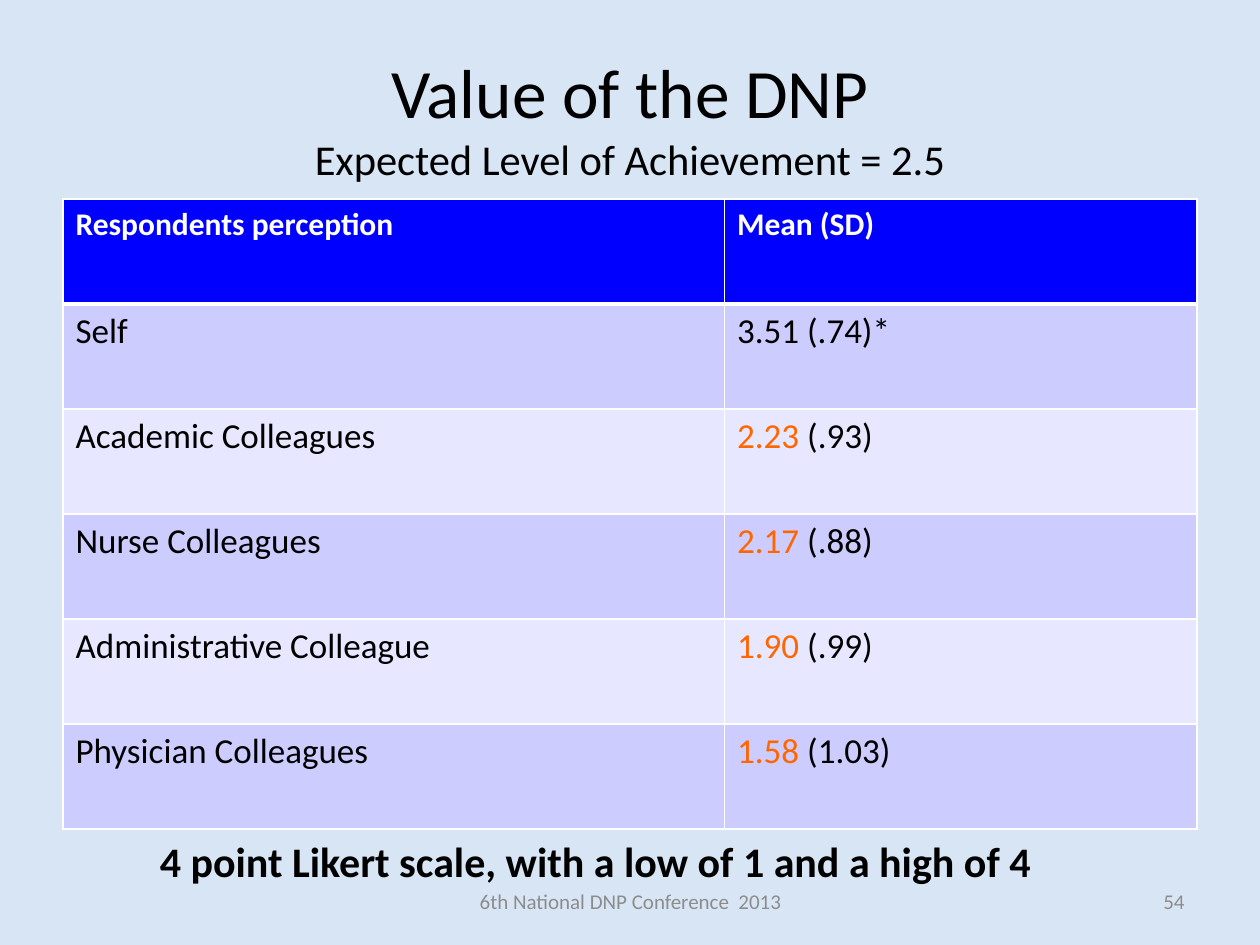
from dataclasses import dataclass

from lxml.etree import SubElement
from pptx import Presentation
from pptx.dml.color import RGBColor
from pptx.enum.text import MSO_ANCHOR, MSO_AUTO_SIZE, PP_ALIGN
from pptx.oxml.ns import qn
from pptx.util import Inches, Pt


@dataclass(frozen=True)
class Theme:
    font: str = "Calibri"
    background: str = "D8E5F5"
    text: str = "000000"
    muted: str = "8C8C8C"
    light: str = "FFFFFF"
    accent: str = "FF6600"
    header: str = "0000FF"
    bands: tuple = ("CCCCFF", "E7E7FF")
    title_size: float = 39.6
    subtitle_size: float = 24.3
    header_size: float = 18
    body_size: float = 20
    caption_size: float = 24
    footer_size: float = 12
    thin: float = 1
    thick: float = 3


class SlideBuilder:
    def __init__(self, slide, theme):
        self.slide = slide
        self.theme = theme
        fill = slide.background.fill
        fill.solid()
        fill.fore_color.rgb = RGBColor.from_string(theme.background)

    def add_run(self, paragraph, text, size, color, bold=False):
        run = paragraph.add_run()
        run.text = text
        formats = {"name": self.theme.font, "size": Pt(size), "bold": bold}
        for name, value in formats.items():
            setattr(run.font, name, value)
        run.font.color.rgb = RGBColor.from_string(color)

    def place(self, shape, box):
        for name, value in zip(("left", "top", "width", "height"), box):
            setattr(shape, name, Inches(value))

    def format_frame(self, frame, anchor):
        formats = {
            "word_wrap": True,
            "auto_size": MSO_AUTO_SIZE.NONE,
            "vertical_anchor": anchor,
        }
        for name, value in formats.items():
            setattr(frame, name, value)

    def add_title(self, title, subtitle, box):
        shape = self.slide.shapes.title
        self.place(shape, box)
        self.format_frame(shape.text_frame, MSO_ANCHOR.MIDDLE)
        paragraph = shape.text_frame.paragraphs[0]
        paragraph.alignment = PP_ALIGN.CENTER
        self.add_run(paragraph, title, self.theme.title_size, self.theme.text)
        paragraph.add_line_break()
        self.add_run(paragraph, subtitle, self.theme.subtitle_size, self.theme.text)

    def add_text(self, text, box, size, color, alignment=PP_ALIGN.LEFT,
                 anchor=MSO_ANCHOR.TOP, bold=False):
        shape = self.slide.shapes.add_textbox(*map(Inches, box))
        self.format_frame(shape.text_frame, anchor)
        paragraph = shape.text_frame.paragraphs[0]
        paragraph.alignment = alignment
        self.add_run(paragraph, text, size, color, bold)

    def add_footer(self, text, box, alignment):
        self.add_text(text, box, self.theme.footer_size, self.theme.muted,
                      alignment, MSO_ANCHOR.MIDDLE)

    def format_cell(self, cell, row_index):
        theme = self.theme
        widths = {
            "L": theme.thin,
            "R": theme.thin,
            "T": theme.thick if row_index == 1 else theme.thin,
            "B": theme.thick if row_index == 0 else theme.thin,
        }
        properties = cell._tc.get_or_add_tcPr()
        for side, width in widths.items():
            line = SubElement(properties, qn(f"a:ln{side}"), w=str(Pt(width)))
            solid = SubElement(line, qn("a:solidFill"))
            SubElement(solid, qn("a:srgbClr"), val=theme.light)
        color = theme.bands[(row_index - 1) % 2] if row_index else theme.header
        cell.fill.solid()
        cell.fill.fore_color.rgb = RGBColor.from_string(color)

    def add_table(self, header, records, box, column_widths):
        theme = self.theme
        rows = [(header[0], "", header[1])] + records
        table = self.slide.shapes.add_table(
            len(rows), len(column_widths), *map(Inches, box)).table
        for column, width in zip(table.columns, column_widths):
            column.width = Inches(width)
        for row_index, (label, low_mean, rest) in enumerate(rows):
            is_header = row_index == 0
            size = theme.header_size if is_header else theme.body_size
            color = theme.light if is_header else theme.text
            contents = ([(label, color)], [(low_mean, theme.accent), (rest, color)])
            for column_index, parts in enumerate(contents):
                cell = table.cell(row_index, column_index)
                self.format_cell(cell, row_index)
                paragraph = cell.text_frame.paragraphs[0]
                for text, part_color in parts:
                    if text:
                        self.add_run(paragraph, text, size, part_color, is_header)


def main():
    presentation = Presentation()
    presentation.slide_width = Inches(10)
    presentation.slide_height = Inches(7.5)
    theme = Theme()
    slide = presentation.slides.add_slide(presentation.slide_layouts[5])
    builder = SlideBuilder(slide, theme)

    builder.add_title("Value of the DNP", "Expected Level of Achievement = 2.5",
                      (0.5, 0.3, 9, 1.25))
    records = [
        ("Self", "", "3.51 (.74)*"),
        ("Academic Colleagues", "2.23", " (.93)"),
        ("Nurse Colleagues", "2.17", " (.88)"),
        ("Administrative Colleague", "1.90", " (.99)"),
        ("Physician Colleagues", "1.58", " (1.03)"),
    ]
    builder.add_table(("Respondents perception", "Mean (SD)"), records,
                      (0.5, 1.58, 9, 5), (5.25, 3.75))
    builder.add_footer("6th National DNP Conference  2013",
                       (3.42, 6.95, 3.17, 0.4), PP_ALIGN.CENTER)
    builder.add_footer("54", (7.17, 6.95, 2.33, 0.4), PP_ALIGN.RIGHT)
    builder.add_text("4 point Likert scale, with a low of 1 and a high of 4",
                     (1.17, 6.58, 7.33, 0.5), theme.caption_size, theme.text,
                     bold=True)
    presentation.save("out.pptx")


if __name__ == "__main__":
    main()
